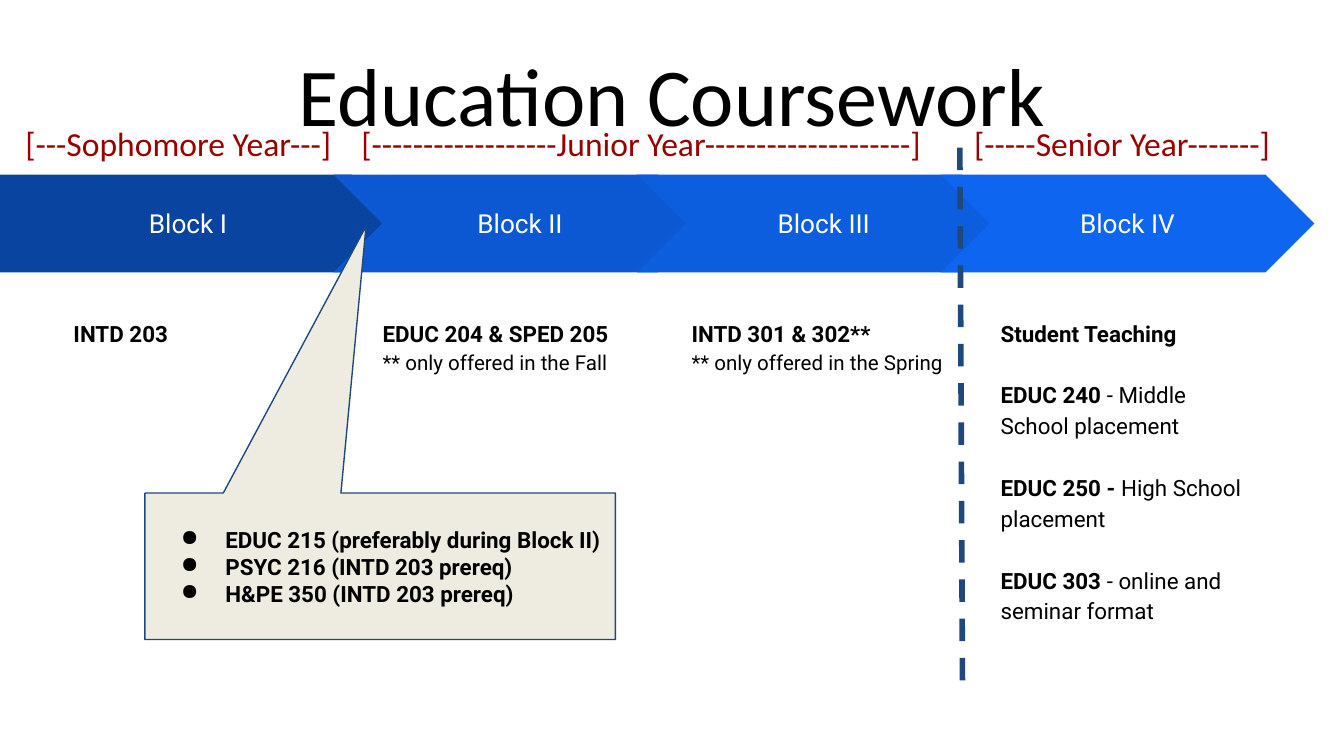
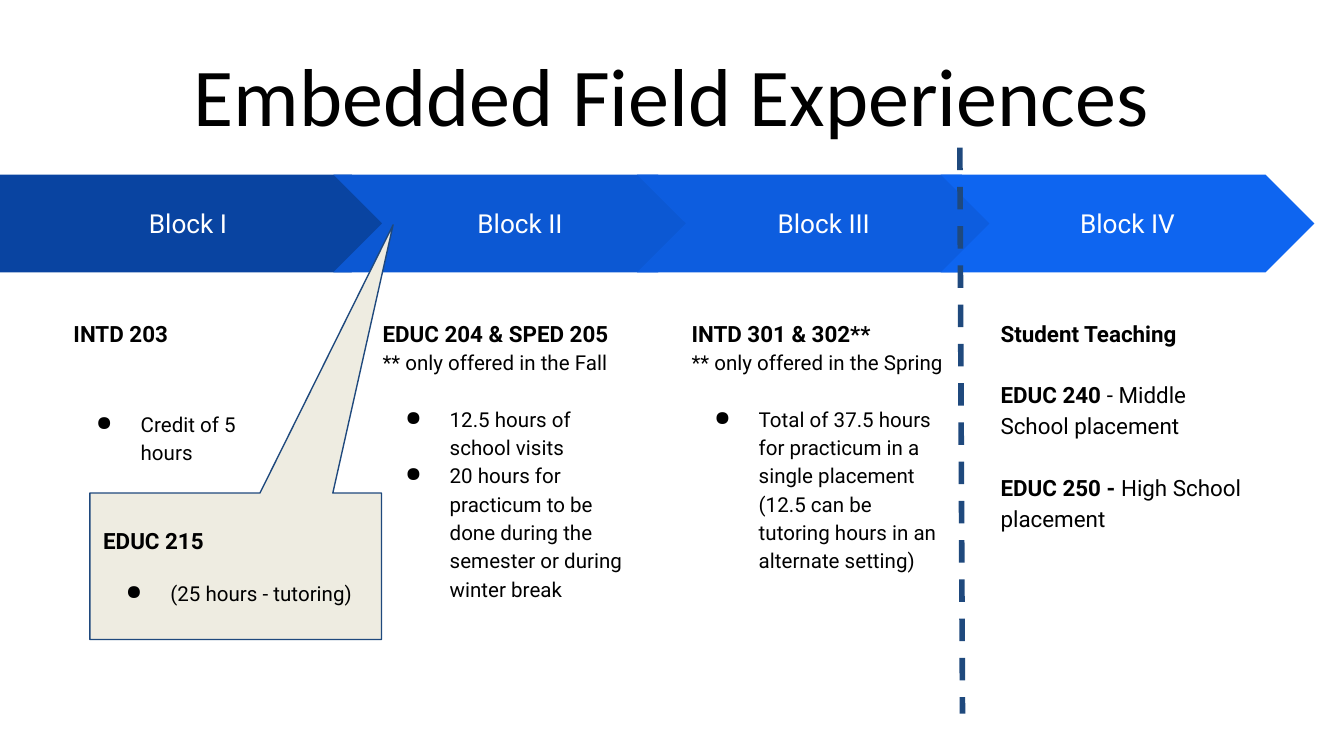
from pptx import Presentation
from pptx.dml.color import RGBColor
from pptx.enum.dml import MSO_LINE
from pptx.enum.shapes import MSO_CONNECTOR, MSO_SHAPE
from pptx.enum.text import MSO_ANCHOR, PP_ALIGN
from pptx.oxml.ns import qn
from pptx.util import Cm, Pt
from lxml.etree import SubElement

COLORS = {
    "ink": "000000",
    "white": "FFFFFF",
    "year": "990000",
    "navy": "1F497D",
    "callout": "EEECE1",
    "Block I": "0944A1",
    "Block II": "0C58D3",
    "Block III": "0D5DDF",
    "Block IV": "0E65F0",
}
BLOCKS = ["Block I", "Block II", "Block III", "Block IV"]
HEADING = {"size": Pt(12), "bold": True, "name": "Roboto"}
PLAIN = {**HEADING, "bold": False}
DETAIL = {**PLAIN, "size": Pt(11)}
BLOCK_NAME = {**PLAIN, "size": Pt(14)}
TITLE = {"size": Pt(44), "name": "Calibri"}
YEAR = {"size": Pt(18), "name": "Calibri"}
LOOSE = 1.15
BLANK_12 = 16.5
BLANK_11 = 15.1
BLANK_SINGLE = 14.4


def rgb(name):
    return RGBColor.from_string(COLORS[name])


def apply(target, values):
    for name, value in values.items():
        setattr(target, name, value)


def line(*spans, before=0, indent=False, bullet=False):
    return {"spans": spans, "before": before, "indent": indent, "bullet": bullet}


def set_indent(para, bullet):
    properties = para._p.get_or_add_pPr()
    properties.set("marL", str(Cm(1.27)))
    properties.set("indent", str(Cm(-0.84) if bullet else 0))
    if bullet:
        color = SubElement(properties, qn("a:buClr"))
        SubElement(color, qn("a:srgbClr"), val=COLORS["ink"])
        SubElement(properties, qn("a:buChar"), char="●")


def add_tabs(para, stops):
    tabs = SubElement(para._p.get_or_add_pPr(), qn("a:tabLst"))
    for stop in stops:
        SubElement(tabs, qn("a:tab"), pos=str(Cm(stop)), algn="l")


def write(shape, lines, color="ink", align=PP_ALIGN.LEFT, anchor=MSO_ANCHOR.TOP,
          spacing=1.0, inset=0.25):
    frame = shape.text_frame
    apply(frame, {
        "word_wrap": True, "vertical_anchor": anchor,
        "margin_left": Cm(0.25), "margin_right": Cm(0.25),
        "margin_top": Cm(inset), "margin_bottom": Cm(inset),
    })
    for index, item in enumerate(lines):
        para = frame.add_paragraph() if index else frame.paragraphs[0]
        if item["indent"] or item["bullet"]:
            set_indent(para, item["bullet"])
        apply(para, {"alignment": align, "line_spacing": spacing,
                     "space_before": Pt(item["before"])})
        for text, style in item["spans"]:
            span = para.add_run()
            span.text = text
            apply(span.font, style)
            span.font.color.rgb = rgb(color)


def add_text(page, place, lines, **options):
    box = page.shapes.add_textbox(*map(Cm, place))
    write(box, lines, **options)
    return box


def add_filled(page, preset, place, fill):
    shape = page.shapes.add_shape(preset, *map(Cm, place))
    shape.shadow.inherit = False
    shape.fill.solid()
    shape.fill.fore_color.rgb = rgb(fill)
    return shape


def add_block_band(page):
    for index, name in enumerate(BLOCKS):
        if index:
            preset, left, width = MSO_SHAPE.CHEVRON, 6.3 + 5.74 * (index - 1), 7.06
        else:
            preset, left, width = MSO_SHAPE.PENTAGON, 0, 7.57
        arrow = add_filled(page, preset, (left, 3.3, width, 1.85), name)
        arrow.line.fill.background()
        write(arrow, [line((name, BLOCK_NAME))], color="white",
              align=PP_ALIGN.CENTER, anchor=MSO_ANCHOR.MIDDLE)


def add_courses(page, columns):
    for index, lines in enumerate(columns):
        add_text(page, (1.14 + 5.84 * index, 5.72, 5.28, 7.26), lines, spacing=LOOSE)


def add_divider(page, bottom):
    divider = page.shapes.add_connector(
        MSO_CONNECTOR.STRAIGHT, Cm(18.14), Cm(2.79), Cm(18.19), Cm(bottom))
    apply(divider.line, {"width": Pt(3), "dash_style": MSO_LINE.DASH})
    divider.line.color.rgb = rgb("navy")
    SubElement(divider._element.spPr, qn("a:effectLst"))


def add_callout(page, left, width, tip, lines):
    callout = add_filled(page, MSO_SHAPE.RECTANGULAR_CALLOUT,
                         (left, 9.32, width, 2.77), "callout")
    for index, value in enumerate(tip):
        callout.adjustments[index] = value
    callout.line.width = Pt(0.75)
    callout.line.color.rgb = rgb("navy")
    write(callout, lines, anchor=MSO_ANCHOR.MIDDLE)


def add_years(page):
    years = "\t".join([
        "[---Sophomore Year---]",
        "[------------------Junior Year--------------------]",
        "[-----Senior Year-------]",
    ])
    box = add_text(page, (0.23, 2.08, 24.9, 2.39), [line((years, YEAR))], color="year")
    add_tabs(box.text_frame.paragraphs[0], [6.35, 17.93])


def add_page(deck, title, columns, divider_bottom):
    page = deck.slides.add_slide(deck.slide_layouts[6])
    add_text(page, (1.27, 0.58, 22.86, 2.39), [line((title, TITLE))],
             align=PP_ALIGN.CENTER, anchor=MSO_ANCHOR.MIDDLE, inset=0.13)
    add_block_band(page)
    add_courses(page, columns)
    add_divider(page, divider_bottom)
    return page


def main():
    deck = Presentation()
    apply(deck, {"slide_width": Cm(25.4), "slide_height": Cm(14.29)})

    first = [line(("INTD 203", HEADING))]
    second = [line(("EDUC 204 & SPED 205", HEADING)),
              line(("** only offered in the Fall", DETAIL))]
    third = [line(("INTD 301 & 302**", HEADING)),
             line(("** only offered in the Spring", DETAIL))]
    fourth = [
        line(("Student Teaching", HEADING)),
        line(("EDUC 240 ", HEADING), ("- Middle School placement", PLAIN), before=BLANK_12),
        line(("EDUC 250 -", HEADING), (" High School placement", PLAIN), before=BLANK_12),
    ]
    seminar = line(("EDUC 303", HEADING), (" - online and seminar format", PLAIN),
                   before=BLANK_12)

    coursework = add_page(deck, "Education Coursework",
                          [first, second, third, fourth + [seminar]], 13)
    add_callout(coursework, 2.74, 8.89, (-0.03, -2.32), [
        line((course, HEADING), bullet=True) for course in (
            "EDUC 215 (preferably during Block II)",
            "PSYC 216 (INTD 203 prereq)",
            "H&PE 350 (INTD 203 prereq)",
        )])
    add_years(coursework)

    credit = [line(("Credit of 5", DETAIL), before=2 * BLANK_12, bullet=True),
              line(("hours", DETAIL), indent=True)]
    visits = [line(("12.5 hours of school visits", DETAIL), before=BLANK_11, bullet=True),
              line(("20 hours for practicum to be done during the semester "
                    "or during winter break", DETAIL), bullet=True)]
    practicum = [line(("Total of 37.5 hours for practicum in a single placement "
                       "(12.5 can be tutoring hours in an alternate setting)", DETAIL),
                      before=BLANK_11, bullet=True)]
    field = add_page(deck, "Embedded Field Experiences",
                     [first + credit, second + visits, third + practicum, fourth], 13.49)
    add_callout(field, 1.7, 5.51, (0.54, -2.33), [
        line(("EDUC 215", HEADING)),
        line(("(25 hours - tutoring)", DETAIL), before=BLANK_SINGLE, bullet=True),
    ])
    deck.save("out.pptx")


if __name__ == "__main__":
    main()
